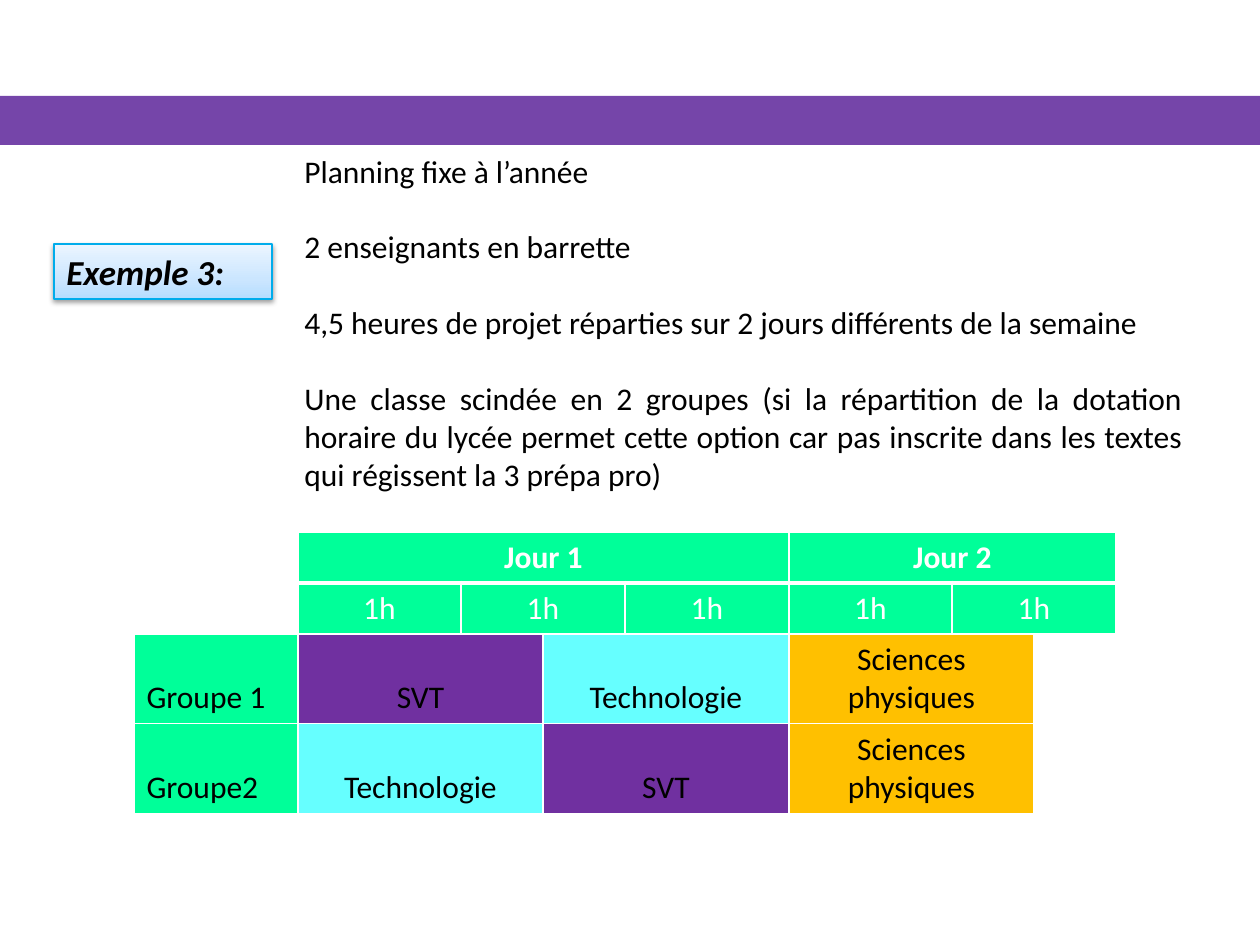
from lxml import etree
from pptx import Presentation
from pptx.dml.color import RGBColor
from pptx.enum.shapes import MSO_SHAPE
from pptx.enum.text import MSO_ANCHOR, PP_ALIGN
from pptx.oxml import parse_xml
from pptx.oxml.ns import nsdecls, qn
from pptx.util import Pt

PX = 914400 / 126
RECT = MSO_SHAPE.RECTANGLE
MIDDLE, BOTTOM = MSO_ANCHOR.MIDDLE, MSO_ANCHOR.BOTTOM
LEFT, CENTER, JUSTIFY = PP_ALIGN.LEFT, PP_ALIGN.CENTER, PP_ALIGN.JUSTIFY

FONT = "Calibri"
WHITE = RGBColor(0xFF, 0xFF, 0xFF)
BLACK = RGBColor(0x00, 0x00, 0x00)
BAND = RGBColor(0x75, 0x45, 0xA9)
LABEL_LINE = RGBColor(0x00, 0xAC, 0xEB)
GREEN = RGBColor(0x00, 0xFF, 0x99)
PURPLE = RGBColor(0x70, 0x30, 0xA0)
CYAN = RGBColor(0x66, 0xFF, 0xFF)
ORANGE = RGBColor(0xFF, 0xC0, 0x00)
LABEL_STOPS = [
    (0, RGBColor(0xB5, 0xDD, 0xFF)),
    (35, RGBColor(0xCB, 0xE6, 0xFF)),
    (100, RGBColor(0xEB, 0xF5, 0xFF)),
]

POINTS = [
    "Planning fixe à l’année",
    "2 enseignants en barrette",
    "4,5 heures de projet réparties sur 2 jours différents de la semaine",
    "Une classe scindée en 2 groupes (si la répartition de la dotation "
    "horaire du lycée permet cette option car pas inscrite dans les textes "
    "qui régissent la 3 prépa pro)",
]

SVT = ("SVT", 2, PURPLE)
TECHNO = ("Technologie", 2, CYAN)
SCIENCES = ("Sciences physiques", 2, ORANGE)
HOUR, LONG_HOUR = ("1h", 1, GREEN), ("1h", 2, GREEN)
EMPTY = ("", 1, None)
# Each cell: text, number of columns, fill
ROWS = [
    [EMPTY, ("Jour 1", 4, GREEN), ("Jour 2", 3, GREEN)],
    [EMPTY, HOUR, LONG_HOUR, HOUR, HOUR, LONG_HOUR],
    [("Groupe 1", 1, GREEN), SVT, TECHNO, SCIENCES, EMPTY],
    [("Groupe2", 1, GREEN), TECHNO, SVT, SCIENCES, EMPTY],
]
COL_WIDTHS = [164, 163, 82, 82] * 2
ROW_HEIGHTS = [51, 51, 88, 88]


def px(*lengths):
    return [round(n * PX) for n in lengths]


def add_text(p, text, size=18, color=BLACK, bold=False, italic=False, align=LEFT):
    p.alignment = align
    r = p.add_run()
    r.text = text
    f = r.font
    f.name, f.size, f.bold, f.italic = FONT, Pt(size), bold, italic
    f.color.rgb = color


def add_band(s):
    sp = s.shapes.add_shape(RECT, *px(0, 96, 1260, 49))
    sp.shadow.inherit = False
    sp.fill.solid()
    sp.fill.fore_color.rgb = BAND
    sp.line.fill.background()


def set_gradient(sp, stops):
    """Fill the shape with stops running from bottom to top."""
    sp.fill.gradient()
    sp.fill.gradient_angle = 90
    gs_list = sp._element.spPr.find(".//" + qn("a:gsLst"))
    for gs in list(gs_list):
        gs_list.remove(gs)
    for position, color in stops:
        gs = etree.SubElement(gs_list, qn("a:gs"), pos=str(position * 1000))
        etree.SubElement(gs, qn("a:srgbClr"), val=str(color))


def set_shadow(sp, blur, distance, opacity):
    """Cast a black shadow straight down."""
    sp.shadow.inherit = False
    sp._element.spPr.find(qn("a:effectLst")).append(parse_xml(
        f'<a:outerShdw {nsdecls("a")} blurRad="{Pt(blur)}" dist="{Pt(distance)}" '
        f'dir="5400000" rotWithShape="0"><a:srgbClr val="{BLACK}">'
        f'<a:alpha val="{opacity * 1000}"/></a:srgbClr></a:outerShdw>'))


def add_label(s):
    sp = s.shapes.add_shape(RECT, *px(54, 244, 218, 55))
    set_gradient(sp, LABEL_STOPS)
    sp.line.color.rgb = LABEL_LINE
    sp.line.width = Pt(0.75)
    set_shadow(sp, 3.1, 1.6, 38)
    tf = sp.text_frame
    tf.word_wrap = True
    tf.vertical_anchor = MIDDLE
    add_text(tf.paragraphs[0], "Exemple 3:", 20, bold=True, italic=True)


def add_points(s):
    tf = s.shapes.add_textbox(*px(292, 125, 903, 394)).text_frame
    tf.word_wrap = True
    tf.vertical_anchor = MIDDLE
    for i, text in enumerate(POINTS):
        p = tf.add_paragraph() if i else tf.paragraphs[0]
        if i:
            p.space_before = Pt(21.7)
        add_text(p, text, align=JUSTIFY)


def set_borders(cell, top, bottom):
    tcPr = cell._tc.get_or_add_tcPr()
    widths = {"lnL": 1, "lnR": 1, "lnT": top, "lnB": bottom}
    for i, (tag, width) in enumerate(widths.items()):
        tcPr.insert(i, parse_xml(
            f'<a:{tag} {nsdecls("a")} w="{Pt(width)}"><a:solidFill>'
            f'<a:srgbClr val="{WHITE}"/></a:solidFill></a:{tag}>'))


def fill_cell(cell, text, fill, row, col):
    if fill is None:
        cell.fill.background()
        return
    cell.fill.solid()
    cell.fill.fore_color.rgb = fill
    cell.vertical_anchor = BOTTOM if row > 1 else MSO_ANCHOR.TOP
    add_text(cell.text_frame.paragraphs[0], text,
             color=WHITE if row < 2 else BLACK, bold=row == 0,
             align=CENTER if col else LEFT)


def add_timetable(s):
    frame = s.shapes.add_table(
        len(ROWS), len(COL_WIDTHS),
        *px(134, 532, sum(COL_WIDTHS), sum(ROW_HEIGHTS)))
    table = frame.table
    table.first_row = table.horz_banding = False
    for column, width in zip(table.columns, px(*COL_WIDTHS)):
        column.width = width
    for row, height in zip(table.rows, px(*ROW_HEIGHTS)):
        row.height = height
    for i, cells in enumerate(ROWS):
        col = 0
        for text, span, fill in cells:
            cell = table.cell(i, col)
            if span > 1:
                cell.merge(table.cell(i, col + span - 1))
            fill_cell(cell, text, fill, i, col)
            col += span
        for cell in table.rows[i].cells:
            set_borders(cell, 3 if i == 1 else 1, 3 if i == 0 else 1)


def main():
    prs = Presentation()
    prs.slide_width, prs.slide_height = px(1260, 945)
    s = prs.slides.add_slide(prs.slide_layouts[6])
    add_band(s)
    add_timetable(s)
    add_label(s)
    add_points(s)
    prs.save("out.pptx")


if __name__ == "__main__":
    main()
